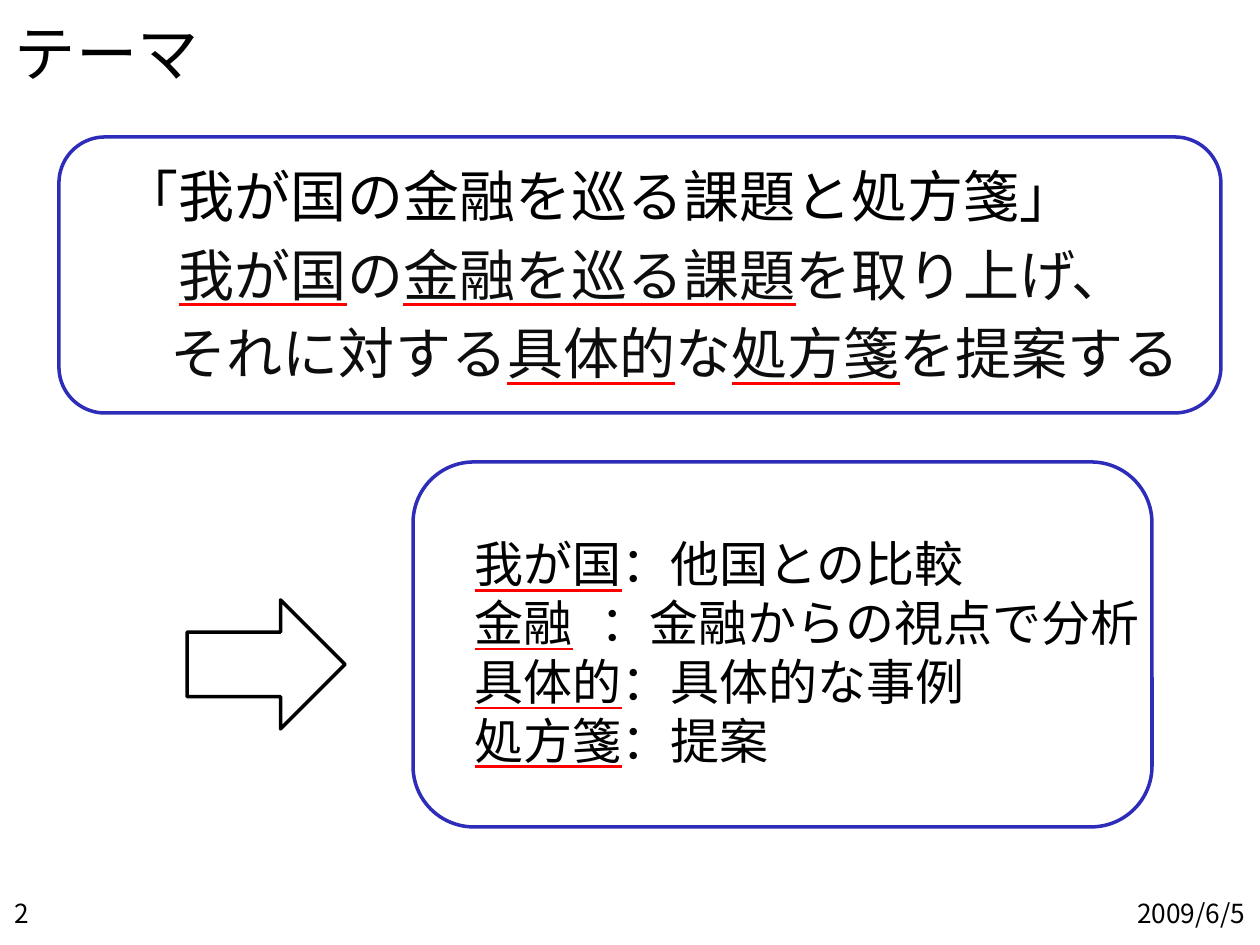
import pptx
import pptx.util
import pptx.dml.color
import pptx.enum.shapes
import pptx.enum.text
import pptx.oxml.ns
from lxml import etree

SHAPE = pptx.enum.shapes.MSO_SHAPE
ALIGN = pptx.enum.text.PP_ALIGN
ANCHOR = pptx.enum.text.MSO_ANCHOR
qn = pptx.oxml.ns.qn

GOTHIC, ROMAN = "Noto Sans CJK JP", "Times New Roman"
BLACK, DARK, WHITE, BLUE, RED = "000000", "0D0D0D", "FFFFFF", "2D2DB9", "FF0000"

# Each paragraph is (left indent, colour, runs); each run is (text, underlined).
TITLE = [(0, BLACK, [("テーマ", False)])]
NUMBER = [(0, BLACK, [("2", False)])]
DATE = [(0, BLACK, [("2009/6/5", False)])]
THEME = [
    (0, BLACK, [("「我が国の金融を巡る課題と処方箋」", False)]),
    (56, DARK, [("我が国", True), ("の", False), ("金融を巡る課題", True),
                ("を取り上げ、", False)]),
    (48, DARK, [("それに対する", False), ("具体的", True), ("な", False),
                ("処方箋", True), ("を提案する", False)]),
]
KEYWORDS = [
    ("我が国", "：他国との比較"),
    ("金融", "\t：金融からの視点で分析"),
    ("具体的", "：具体的な事例"),
    ("処方箋", "：提案"),
]
EXPLANATION = [(0, BLACK, [(word, True), (meaning, False)]) for word, meaning in KEYWORDS]

OUTLINES = [
    (SHAPE.ROUNDED_RECTANGLE, (59, 137, 1162, 276), BLUE),
    (SHAPE.RIGHT_ARROW, (187, 600, 158, 129), BLACK),
    (SHAPE.FLOWCHART_ALTERNATE_PROCESS, (413, 462, 739, 365), BLUE),
]


def px(length):
    return pptx.util.Emu(round(length * 914400 / 126))


def rgb(value):
    return pptx.dml.color.RGBColor.from_string(value)


def add_outline(slide, preset, box, color):
    shape = slide.shapes.add_shape(preset, *map(px, box))
    shape.shadow.inherit = False
    shape.fill.solid()
    shape.fill.fore_color.rgb = rgb(WHITE)
    shape.line.color.rgb = rgb(color)
    shape.line.width = pptx.util.Pt(2)


def add_run(paragraph, words, underlined, size, font, color):
    run = paragraph.add_run()
    run.text = words
    run.font.size = pptx.util.Pt(size)
    run.font.color.rgb = rgb(color)
    run.font.underline = underlined
    properties = run.font._element
    if underlined:
        fill = etree.SubElement(etree.SubElement(properties, qn("a:uFill")), qn("a:solidFill"))
        etree.SubElement(fill, qn("a:srgbClr"), val=RED)
    run.font.name = font
    etree.SubElement(properties, qn("a:ea"), typeface=GOTHIC)


def add_text(slide, paragraphs, box, size, font=GOTHIC, align=ALIGN.LEFT,
             anchor=ANCHOR.TOP, insets=(15, 15, 15, 15), gap=0, tab=None):
    frame = slide.shapes.add_textbox(*map(px, box)).text_frame
    frame.word_wrap = True
    frame.vertical_anchor = anchor
    frame.margin_left, frame.margin_top, frame.margin_right, frame.margin_bottom = map(px, insets)
    for index, (indent, color, runs) in enumerate(paragraphs):
        paragraph = frame.add_paragraph() if index else frame.paragraphs[0]
        paragraph.alignment = align
        paragraph.space_before = pptx.util.Pt(gap if index else 0)
        properties = paragraph._p.get_or_add_pPr()
        properties.set("marL", str(px(indent)))
        properties.set("indent", "0")
        if tab:
            stops = etree.SubElement(properties, qn("a:tabLst"))
            etree.SubElement(stops, qn("a:tab"), pos=str(px(tab)), algn="l")
        for words, underlined in runs:
            add_run(paragraph, words, underlined, size, font, color)


def main():
    """Build the theme slide and save it."""
    deck = pptx.Presentation()
    deck.slide_width, deck.slide_height = px(1260), px(945)
    slide = deck.slides.add_slide(deck.slide_layouts[6])
    for preset, box, color in OUTLINES:
        add_outline(slide, preset, box, color)
    footer = dict(size=15, anchor=ANCHOR.MIDDLE, insets=(15, 0, 15, 15))
    add_text(slide, DATE, (998, 896, 262, 49), align=ALIGN.RIGHT, **footer)
    add_text(slide, NUMBER, (0, 896, 100, 49), **footer)
    add_text(slide, TITLE, (0, 0, 1260, 100), 35, insets=(15, 15, 15, 0))
    add_text(slide, THEME, (108, 147, 1182, 295), 32, gap=6.4)
    add_text(slide, EXPLANATION, (462, 528, 699, 251), 28, font=ROMAN,
             insets=(13, 6, 13, 6), tab=159)
    deck.save("out.pptx")


if __name__ == "__main__":
    main()
